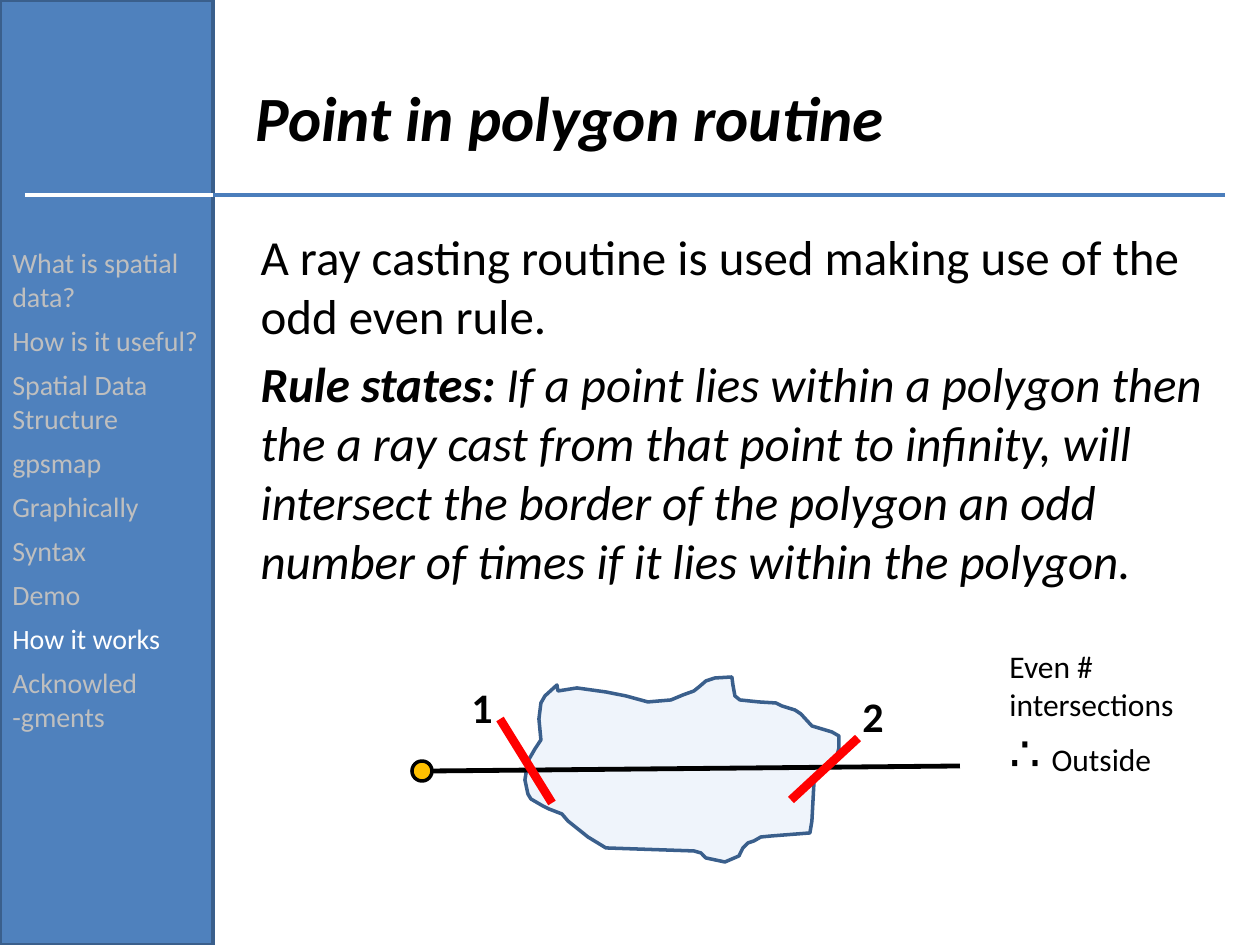
from lxml import etree
from pptx import Presentation
from pptx import util as u
from pptx.dml.color import RGBColor
from pptx.enum import shapes as sh, text as tx
from pptx.oxml import ns

PX = 9144000 / 1260
BLUE = RGBColor(0x4F, 0x81, 0xBD)
EDGE = RGBColor(0x3A, 0x5F, 0x8C)
RULE = RGBColor(0x4B, 0x7E, 0xBC)
PALE = RGBColor(0xC6, 0xD9, 0xF1)
GREY = RGBColor(0xBF, 0xBF, 0xBF)
GOLD = RGBColor(0xFF, 0xC0, 0x00)
RED = RGBColor(0xFF, 0x00, 0x00)
BLACK = RGBColor(0, 0, 0)
WHITE = RGBColor(0xFF, 0xFF, 0xFF)

TOPICS = ["What is spatial data?", "How is it useful?", "Spatial Data Structure",
          "gpsmap", "Graphically", "Syntax", "Demo", "How it works",
          "Acknowled -gments"]
ACTIVE = "How it works"

BORDER = [
    (33, 14), (52, 11), (81, 15), (101, 19), (123, 25), (146, 23), (158, 18),
    (169, 14), (174, 10), (181, 4), (190, 1), (207, 0), (208, 8), (210, 19),
    (215, 23), (234, 25), (251, 26), (257, 29), (270, 33), (276, 37), (287, 49),
    (307, 55), (314, 59), (314, 71), (311, 83), (300, 91), (295, 95), (291, 100),
    (289, 106), (287, 144), (285, 156), (247, 159), (236, 160), (229, 164),
    (223, 166), (218, 171), (214, 179), (200, 185), (181, 181), (176, 176),
    (169, 174), (81, 171), (63, 160), (58, 156), (43, 144), (37, 137), (24, 132),
    (18, 129), (6, 122), (3, 117), (0, 103), (3, 84), (6, 79), (10, 72), (16, 63),
    (14, 42), (16, 26), (20, 19), (32, 8)]


def emu(*vals):
    """Turn pixel lengths into EMU."""
    return [u.Emu(round(v * PX)) for v in vals]


def apply(item, **vals):
    """Set attributes from format values."""
    for key, val in vals.items():
        setattr(item, key, val)


def write(para, words, size, color=BLACK, **style):
    """Add a formatted run to a paragraph."""
    run = para.add_run()
    run.text = words
    apply(run.font, name="Calibri", size=u.Pt(size), **style)
    run.font.color.rgb = color


def paint(shape, fill, line, width=2):
    """Give a shape a flat fill and outline."""
    shape.shadow.inherit = False
    shape.fill.solid()
    shape.fill.fore_color.rgb = fill
    shape.line.color.rgb = line
    shape.line.width = u.Pt(width)


def stroke(slide, start, end, color, width):
    """Draw a straight line without shadow."""
    line = slide.shapes.add_connector(sh.MSO_CONNECTOR.STRAIGHT, *emu(*start, *end))
    line.line.color.rgb = color
    line.line.width = u.Pt(width)
    etree.SubElement(line._element.spPr, ns.qn("a:effectLst"))


def label(slide, box):
    """Add a wrapping text box and return its paragraph."""
    frame = slide.shapes.add_textbox(*emu(*box)).text_frame
    frame.word_wrap = True
    return frame.paragraphs[0]


def place(shape, box):
    """Move a placeholder to a box."""
    apply(shape, **dict(zip(("left", "top", "width", "height"), emu(*box))))
    return shape.text_frame


def sidebar(slide, box):
    """Draw the topic list with the active topic lit."""
    bar = slide.shapes.add_shape(sh.MSO_SHAPE.RECTANGLE, *emu(*box))
    paint(bar, BLUE, EDGE)
    frame = bar.text_frame
    apply(frame, word_wrap=True, vertical_anchor=tx.MSO_ANCHOR.TOP,
          margin_top=emu(246)[0])
    for i, topic in enumerate(TOPICS):
        para = frame.add_paragraph() if i else frame.paragraphs[0]
        apply(para, alignment=tx.PP_ALIGN.LEFT, space_before=u.Pt(6 if i else 0))
        write(para, topic, 16, WHITE if topic == ACTIVE else GREY)


def heading(slide, box):
    """Fill the title and draw the rule below it."""
    x, y, w, h = box
    para = place(slide.shapes.title, box).paragraphs[0]
    para.alignment = tx.PP_ALIGN.LEFT
    write(para, "Point in polygon routine", 36, bold=True, italic=True)
    base = y + h
    stroke(slide, (x - 30, base), (x + w + 28, base), RULE, 2)
    stroke(slide, (x - 218, base), (x - 30, base), WHITE, 2)


def body(slide, box):
    """Fill the body with the odd even rule."""
    frame = place(slide.placeholders[1], box)
    frame.auto_size = tx.MSO_AUTO_SIZE.NONE
    paras = [frame.paragraphs[0], frame.add_paragraph()]
    for para, gap in zip(paras, (0, 5.6)):
        props = para._p.get_or_add_pPr()
        props.set("marL", str(emu(15)[0]))
        props.set("indent", "0")
        etree.SubElement(props, ns.qn("a:buNone"))
        para.space_before = u.Pt(gap)
    write(paras[0], "A ray casting routine is used making use of the odd even rule.", 28)
    write(paras[1], "Rule states: ", 28, bold=True, italic=True)
    write(paras[1], "If a point lies within a polygon then the a ray cast from that "
          "point to infinity, will intersect the border of the polygon an odd number "
          "of times if it lies within the polygon.", 28, italic=True)


def diagram(slide, box):
    """Draw the polygon, the ray and its two crossings."""
    x, y, w, h = box
    pen = slide.shapes.build_freeform(*BORDER[0], scale=PX)
    pen.add_line_segments(BORDER[1:], close=True)
    area = pen.convert_to_shape(*emu(x, y))
    paint(area, PALE, EDGE)
    tint = area._element.spPr.find(".//" + ns.qn("a:srgbClr"))
    etree.SubElement(tint, ns.qn("a:alpha"), val="28000")
    stroke(slide, (x - 93, y + 94), (x + 435, y + 89), BLACK, 2.75)
    dot = slide.shapes.add_shape(sh.MSO_SHAPE.OVAL, *emu(x - 113, y + 84, 20, 20))
    paint(dot, GOLD, BLACK)
    marks = [("1", (-66, -2), (-25, 42), (27, 126)),
             ("2", (325, 7), (333, 61), (266, 123))]
    for name, (dx, dy), (ax, ay), (bx, by) in marks:
        stroke(slide, (x + ax, y + ay), (x + bx, y + by), RED, 5)
        write(label(slide, (x + dx, y + dy, 67, 63)), name, 24, bold=True)


def verdict(slide, box):
    """State what an even count means."""
    para = label(slide, box)
    for words, size in (("Even # intersections ", 18), ("∴ ", 28), ("Outside", 18)):
        write(para, words, size)


def main():
    """Build and save the slide."""
    deck = Presentation()
    deck.slide_width, deck.slide_height = emu(1260, 945)
    slide = deck.slides.add_slide(deck.slide_layouts[1])
    sidebar(slide, (0, 0, 213, 945))
    heading(slide, (243, 38, 954, 157))
    body(slide, (233, 220, 992, 688))
    diagram(slide, (525, 677, 314, 185))
    verdict(slide, (997, 641, 208, 149))
    deck.save("out.pptx")


if __name__ == "__main__":
    main()
